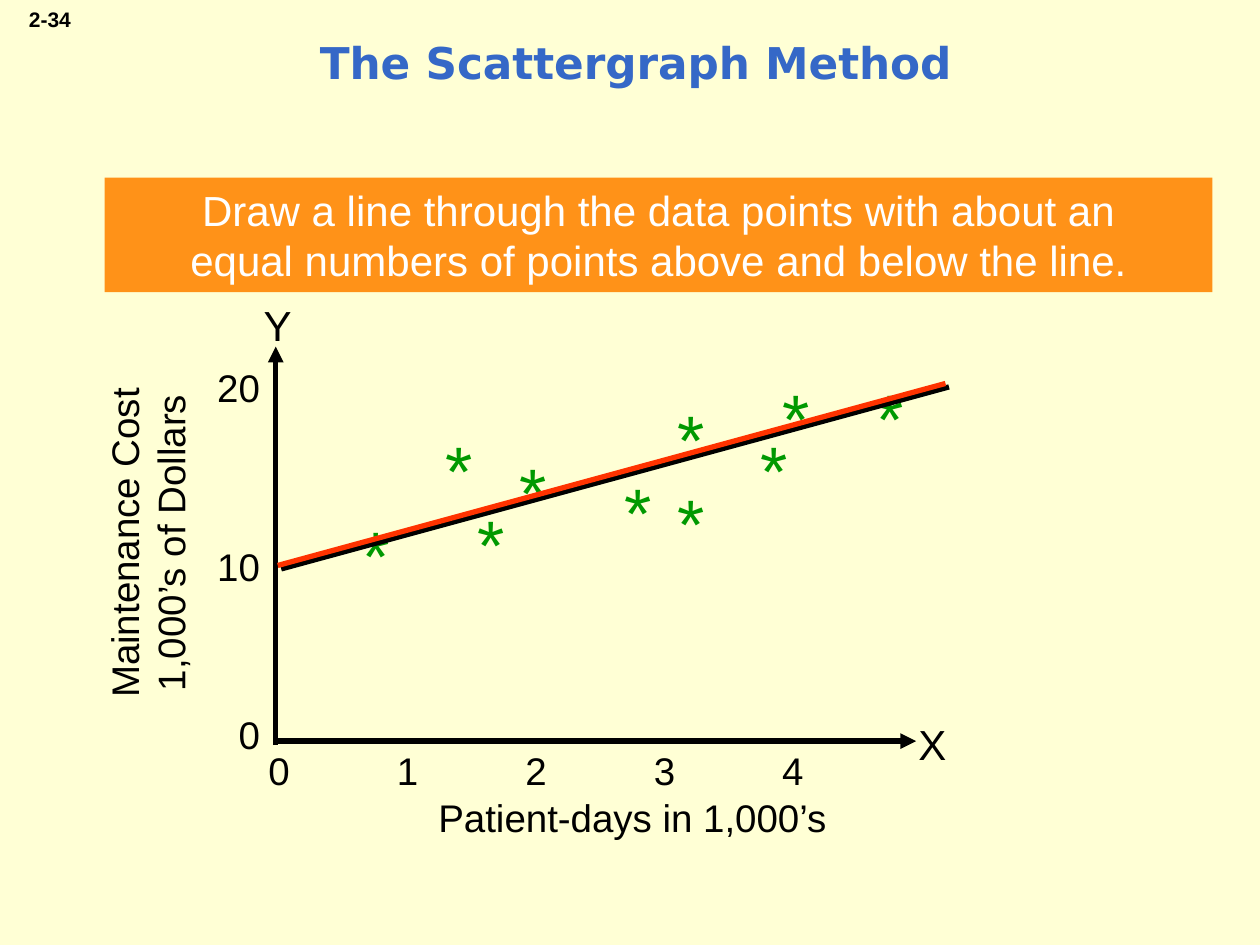
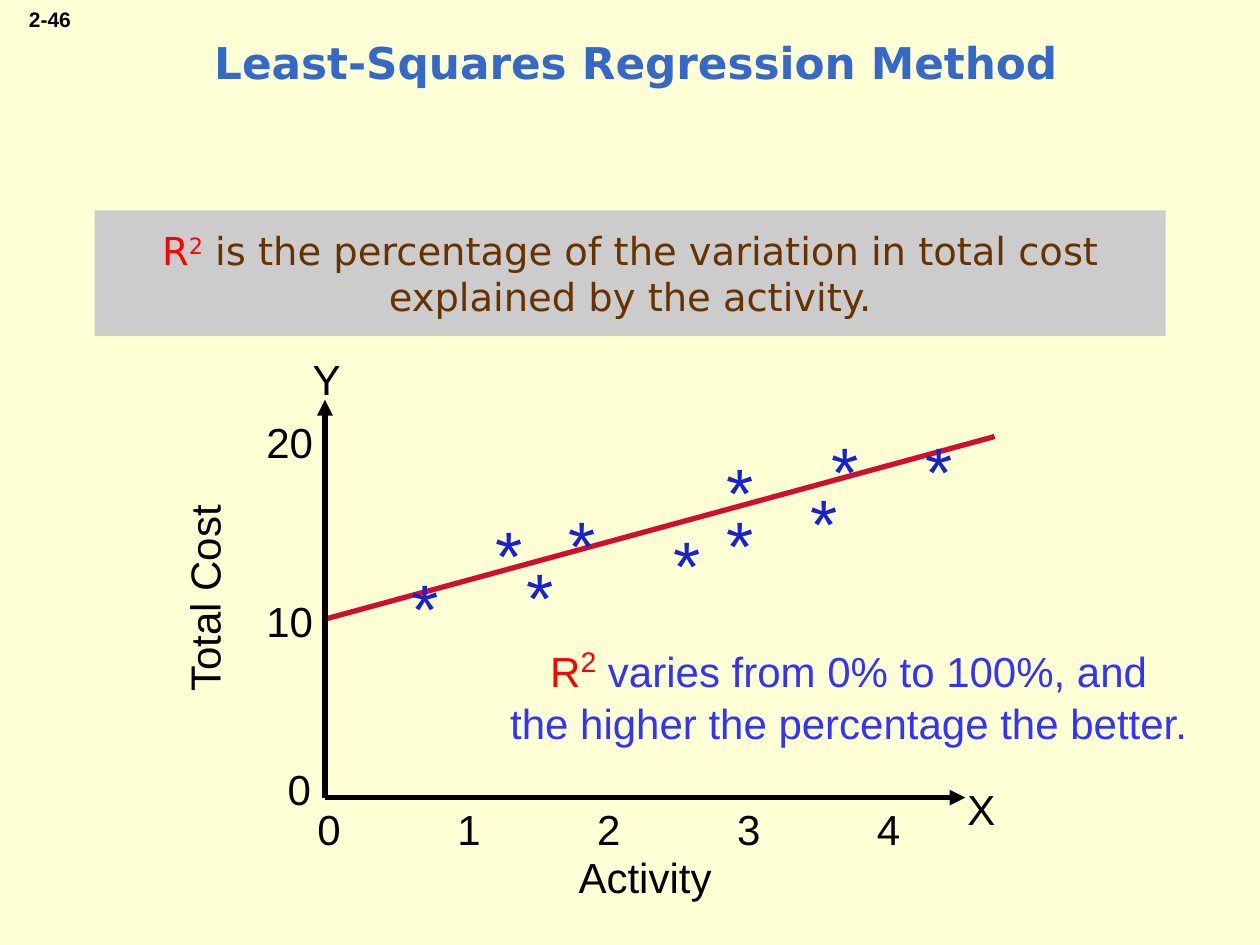
from dataclasses import dataclass

from lxml.etree import SubElement
from pptx import Presentation
from pptx.dml.color import RGBColor
from pptx.enum.shapes import MSO_CONNECTOR, MSO_SHAPE
from pptx.enum.text import MSO_ANCHOR, MSO_AUTO_SIZE, PP_ALIGN
from pptx.oxml.ns import qn
from pptx.util import Cm, Pt


@dataclass(frozen=True)
class Theme:
    background: str = "FFFFD5"
    title: str = "3568C7"
    ink: str = "000000"
    white: str = "FFFFFF"
    orange: str = "FF9218"
    grey: str = "CCCCCC"
    brown: str = "663300"
    red: str = "FF0000"
    blue: str = "3333FF"
    green_star: str = "009900"
    blue_star: str = "1822CD"
    scatter_line: str = "FF3300"
    regression_line: str = "CF0E30"
    body_font: str = "Arial"
    heading_font: str = "DejaVu Sans"
    number_size: int = 12
    small_size: int = 22
    body_size: int = 24
    title_size: int = 25
    raised_size: int = 28
    star_size: int = 40
    line_width: int = 3


THEME = Theme()

TITLE_BOX = (0.43, 0.2, 24.77, 2.11)
NUMBER_BOX = (0.28, 0, 1.4, 0.76)

X_TICKS = ["0", "1", "2", "3", "4"]
Y_TICKS = [("20", -1.43, -7.73, 1.91), ("10", -1.43, -4.12, 2.31), ("0", -1, -0.74, 1.68)]
STARS = [
    (1.5, -4.75, 1.91), (3.18, -6.46, 1.68), (3.81, -4.98, 3.18), (4.67, -6.02, 3.18),
    (6.78, -5.62, 3.18), (7.85, -7.09, 3.18), (7.85, -5.39, 3.18), (9.53, -6.46, 1.27),
    (9.96, -7.52, 1.27), (11.86, -7.52, 3.18),
]
FIT_START, FIT_END = (0.04, -3.54), (13.5, -7.21)
X_AXIS_LENGTH, Y_AXIS_LENGTH = 12.91, 7.95

SLIDES = [
    {
        "number": "2-34",
        "title": "The Scattergraph Method",
        "banner": {
            "box": (2.11, 3.58, 22.33, 2.31),
            "fill": THEME.orange,
            "font": THEME.body_font,
            "text": [("Draw a line through the data points with about an\n"
                      "equal numbers of points above and below the line.",
                      THEME.body_size, THEME.white, False)],
        },
        "chart": {
            "corner": (5.56, 14.94),
            "baseline": 14.94,
            "x_letter_top": 14.35,
            "size": THEME.small_size,
            "tick_pitch": 2.59,
            "x_title": ("Patient-days in 1,000’s", (5.13, 15.88, 15.24, 1.19)),
            "y_title": ("Maintenance Cost\n1,000’s of Dollars", (-0.94, 9.88, 7.82, 2.13)),
            "star_color": THEME.green_star,
            "moved_stars": {},
            "line_color": THEME.scatter_line,
            "line_on_top": True,
        },
    },
    {
        "number": "2-46",
        "title": "Least-Squares Regression Method",
        "banner": {
            "box": (1.91, 4.24, 21.59, 2.54),
            "fill": THEME.grey,
            "font": THEME.heading_font,
            "text": [("R", THEME.small_size, THEME.red, False),
                     ("2", THEME.small_size, THEME.red, True),
                     (" is the percentage of the variation in total cost explained by the activity.",
                      THEME.small_size, THEME.brown, False)],
        },
        "chart": {
            "corner": (6.55, 16.01),
            "baseline": 16.08,
            "x_letter_top": 15.67,
            "size": THEME.body_size,
            "tick_pitch": 2.82,
            "x_title": ("Activity", (6.12, 17.04, 13.77, 1.27)),
            "y_title": ("Total Cost", (0.2, 11.43, 7.82, 1.27)),
            "star_color": THEME.blue_star,
            "moved_stars": {1: -5.82, 6: -6.03},
            "line_color": THEME.regression_line,
            "line_on_top": False,
        },
        "note": {
            "box": (9.53, 12.75, 15.16, 2.29),
            "text": [("R", THEME.body_size, THEME.red, False),
                     ("2", THEME.raised_size, THEME.red, True),
                     (" varies from 0% to 100%, and\nthe higher the percentage the better.",
                      THEME.body_size, THEME.blue, False)],
        },
    },
]


def color(value):
    return RGBColor.from_string(value)


def lengths(values):
    return [Cm(value) for value in values]


def format_run(run, size, value, font, bold=False, raised=False):
    run.font.size = Pt(size)
    run.font.color.rgb = color(value)
    run.font.name = font
    run.font.bold = bold
    if raised:
        run._r.get_or_add_rPr().set("baseline", "30000")


def write(shape, segments, font, align, anchor, wrap=True, bold=False):
    frame = shape.text_frame
    frame.auto_size = MSO_AUTO_SIZE.NONE
    frame.word_wrap = wrap
    frame.vertical_anchor = anchor
    paragraph = frame.paragraphs[0]
    paragraph.alignment = align
    for text, size, value, raised in segments:
        for index, line in enumerate(text.split("\n")):
            if index:
                paragraph.add_line_break()
            run = paragraph.add_run()
            run.text = line
            format_run(run, size, value, font, bold, raised)
    return paragraph


def add_label(slide, box, text, size, value=THEME.ink, align=PP_ALIGN.LEFT,
              anchor=MSO_ANCHOR.TOP, wrap=True, bold=False, rotation=0):
    shape = slide.shapes.add_textbox(*lengths(box))
    shape.rotation = rotation
    return write(shape, [(text, size, value, False)], THEME.body_font, align, anchor, wrap, bold)


def add_line(slide, start, end, value, arrow=False, shadow=False):
    connector = slide.shapes.add_connector(MSO_CONNECTOR.STRAIGHT, *lengths(start + end))
    connector.line.color.rgb = color(value)
    connector.line.width = Pt(THEME.line_width)
    if arrow:
        SubElement(connector.line._get_or_add_ln(), qn("a:tailEnd"), type="triangle")
    effects = SubElement(connector._element.spPr, qn("a:effectLst"))
    if shadow:
        outer = SubElement(effects, qn("a:outerShdw"), dist=str(Pt(2.8)), dir="2700000",
                           algn="ctr", rotWithShape="0")
        SubElement(outer, qn("a:srgbClr"), val=THEME.ink)


def add_tick_row(slide, box, size, pitch):
    paragraph = add_label(slide, box, "\t".join(X_TICKS), size)
    tabs = SubElement(paragraph._p.get_or_add_pPr(), qn("a:tabLst"))
    for step in range(1, len(X_TICKS)):
        SubElement(tabs, qn("a:tab"), pos=str(Cm(step * pitch)), algn="l")


def add_scatter(slide, chart):
    left, bottom = chart["corner"]
    baseline, size = chart["baseline"], chart["size"]
    height = 1.19 if size == THEME.small_size else 1.27

    def add_fit_line():
        start, end = [(left + x, bottom + y) for x, y in (FIT_START, FIT_END)]
        add_line(slide, start, end, chart["line_color"], shadow=chart["line_on_top"])

    if not chart["line_on_top"]:
        add_fit_line()
    add_tick_row(slide, (left - 0.4, baseline, 13.54, height), size, chart["tick_pitch"])
    for text, x, y, width in Y_TICKS:
        add_label(slide, (left + x, bottom + y, width, height), text, size)
    for key, rotation in (("x_title", 0), ("y_title", 270)):
        text, box = chart[key]
        add_label(slide, box, text, size, align=PP_ALIGN.CENTER, rotation=rotation)
    for index, (x, y, width) in enumerate(STARS):
        top = bottom + chart["moved_stars"].get(index, y)
        add_label(slide, (left + x, top, width, 1.93), "*", THEME.star_size, chart["star_color"])
    add_line(slide, (left, baseline), (left + X_AXIS_LENGTH, baseline), THEME.ink, arrow=True)
    add_line(slide, (left, bottom + 0.08), (left, bottom - Y_AXIS_LENGTH), THEME.ink, arrow=True)
    for letter, x, y in (("X", left + 12.7, chart["x_letter_top"]),
                         ("Y", left - 0.5, bottom - 9.02)):
        add_label(slide, (x, y, 1.07, 1.27), letter, THEME.body_size,
                  align=PP_ALIGN.CENTER, anchor=MSO_ANCHOR.MIDDLE, wrap=False)
    if chart["line_on_top"]:
        add_fit_line()


def add_title(slide, text):
    title = slide.shapes.title
    title.left, title.top, title.width, title.height = lengths(TITLE_BOX)
    write(title, [(text, THEME.title_size, THEME.title, False)], THEME.heading_font,
          PP_ALIGN.CENTER, MSO_ANCHOR.MIDDLE, bold=True)


def add_banner(slide, banner):
    shape = slide.shapes.add_shape(MSO_SHAPE.RECTANGLE, *lengths(banner["box"]))
    shape.shadow.inherit = False
    shape.fill.solid()
    shape.fill.fore_color.rgb = color(banner["fill"])
    shape.line.fill.background()
    write(shape, banner["text"], banner["font"], PP_ALIGN.CENTER, MSO_ANCHOR.MIDDLE)


def main():
    presentation = Presentation()
    presentation.slide_width, presentation.slide_height = Cm(25.4), Cm(19.05)
    background = presentation.slide_master.background.fill
    background.solid()
    background.fore_color.rgb = color(THEME.background)
    for content in SLIDES:
        slide = presentation.slides.add_slide(presentation.slide_layouts[5])
        add_title(slide, content["title"])
        add_label(slide, NUMBER_BOX, content["number"], THEME.number_size,
                  align=PP_ALIGN.RIGHT, wrap=False, bold=True)
        add_banner(slide, content["banner"])
        add_scatter(slide, content["chart"])
        if "note" in content:
            note = slide.shapes.add_textbox(*lengths(content["note"]["box"]))
            write(note, content["note"]["text"], THEME.body_font,
                  PP_ALIGN.CENTER, MSO_ANCHOR.TOP)
    presentation.save("out.pptx")


if __name__ == "__main__":
    main()
